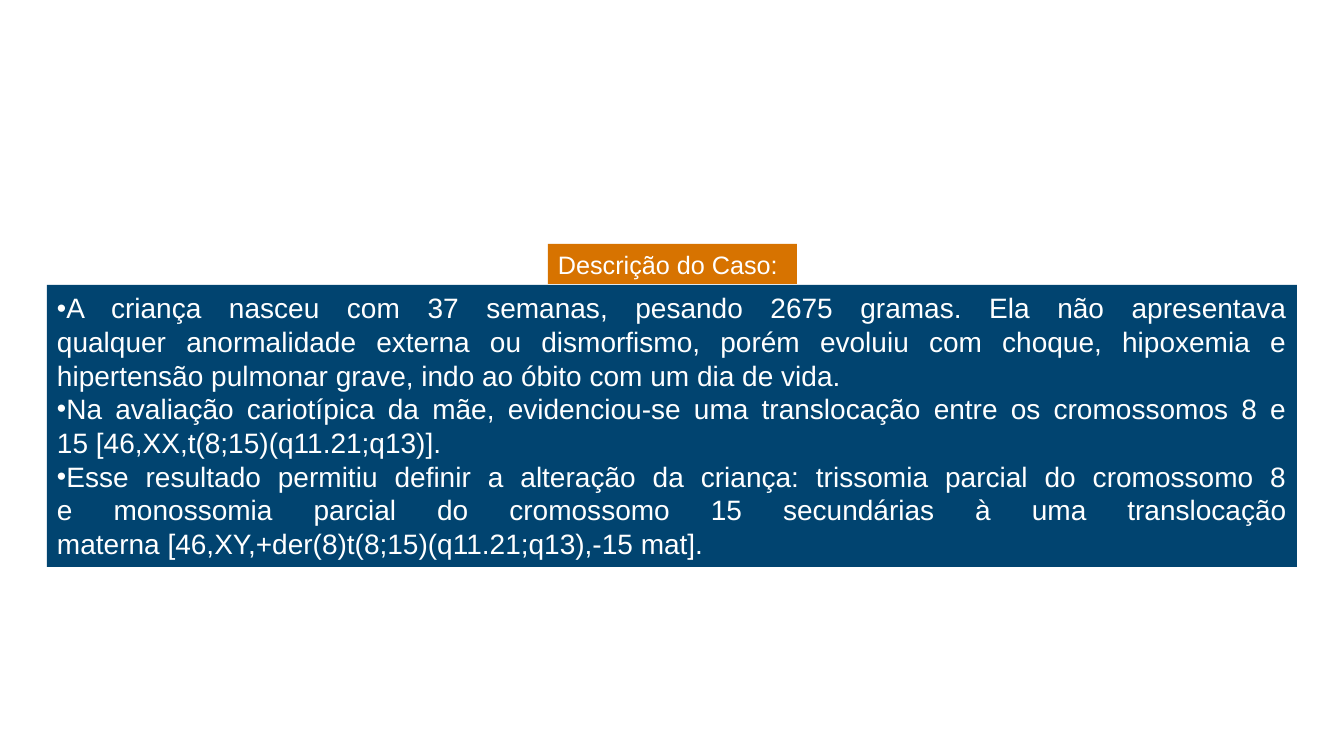
from pptx import Presentation
from pptx import util as u
from pptx.dml.color import RGBColor
from pptx.enum import shapes, text
from lxml import etree

PX = 9071
THEME = {
    "font": "Arial",
    "ink": RGBColor.from_string("FFFFFF"),
    "panel": RGBColor.from_string("014470"),
    "label": RGBColor.from_string("D77300"),
    "body_size": u.Pt(20),
    "label_size": u.Pt(18),
}


def add_panel(page, left, top, width, height, fill, inset_top):
    box = page.shapes.add_shape(
        shapes.MSO_SHAPE.RECTANGLE, *[n * PX for n in (left, top, width, height)])
    box.shadow.inherit = False
    box.fill.solid()
    box.fill.fore_color.rgb = fill
    box.line.fill.background()
    frame = box.text_frame
    frame.word_wrap = True
    frame.vertical_anchor = text.MSO_ANCHOR.TOP
    frame.margin_left = frame.margin_right = 10 * PX
    frame.margin_top = inset_top * PX
    frame.margin_bottom = 0
    return frame


def write(para, words, size, align=text.PP_ALIGN.LEFT, bullet=False, spacing=1.0):
    para.text = words
    para.alignment = align
    para.line_spacing = spacing
    if bullet:
        props = para._p.get_or_add_pPr()
        props.set("marL", "0")
        props.set("indent", "0")
        for tag, name, value in (("buSzPct", "val", "95000"),
                                 ("buFont", "typeface", THEME["font"]),
                                 ("buChar", "char", "•")):
            etree.SubElement(
                props, "{http://schemas.openxmlformats.org/drawingml/2006/main}" + tag
            ).set(name, value)
    for span in para.runs:
        span.font.name = THEME["font"]
        span.font.size = size
        span.font.color.rgb = THEME["ink"]


case_points = [
    "A criança nasceu com 37 semanas, pesando 2675 gramas. Ela não apresentava\v"
    "qualquer anormalidade externa ou dismorfismo, porém evoluiu com choque, hipoxemia e\v"
    "hipertensão pulmonar grave, indo ao óbito com um dia de vida.",
    "Na avaliação cariotípica da mãe, evidenciou-se uma translocação entre os cromossomos 8 e\v"
    "15 [46,XX,t(8;15)(q11.21;q13)].",
    "Esse resultado permitiu definir a alteração da criança: trissomia parcial do cromossomo 8\v"
    "e monossomia parcial do cromossomo 15 secundárias à uma translocação\v"
    "materna [46,XY,+der(8)t(8;15)(q11.21;q13),-15 mat].",
]

deck = Presentation()
deck.slide_width = 1344 * PX
deck.slide_height = 756 * PX
page = deck.slides.add_slide(deck.slide_layouts[6])

body = add_panel(page, 47, 285, 1250, 282, THEME["panel"], 6)
for index, point in enumerate(case_points):
    para = body.paragraphs[0] if index == 0 else body.add_paragraph()
    write(para, point, THEME["body_size"], text.PP_ALIGN.JUSTIFY, bullet=True)

label = add_panel(page, 548, 244, 249, 40, THEME["label"], 5)
write(label.paragraphs[0], "Descrição do Caso:", THEME["label_size"])

deck.save("out.pptx")
